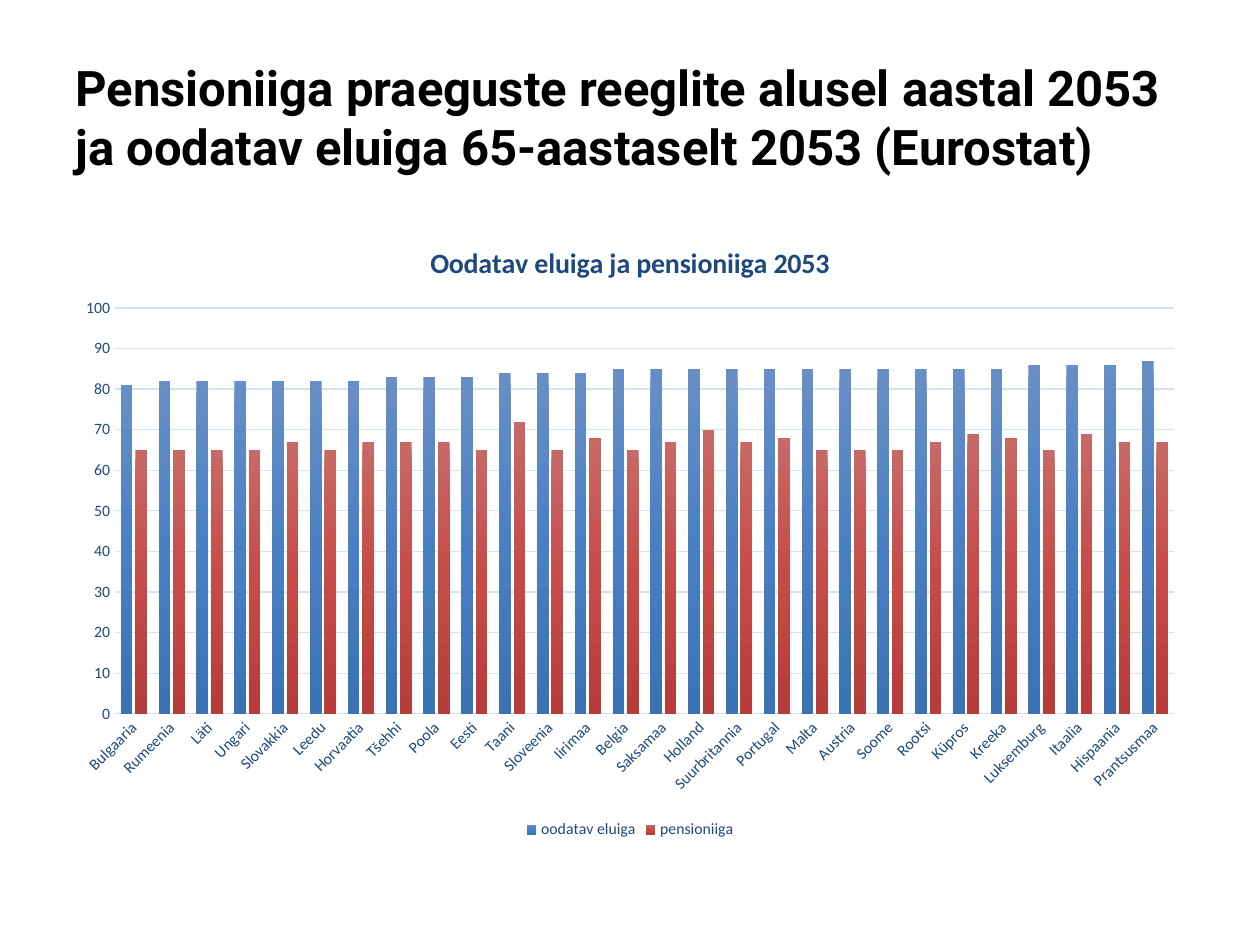
from dataclasses import dataclass

import pptx
import pptx.chart.data
import pptx.dml.color
import pptx.enum.chart
import pptx.enum.text
import pptx.oxml
import pptx.oxml.ns
import pptx.util

EMU_PER_PX = 914400 / 126
COLORS = {"heading": "000000", "label": "1F497D", "grid": "D4E3F4"}


@dataclass(frozen=True)
class Box:
    left: int
    top: int
    width: int
    height: int

    def emu(self) -> list[pptx.util.Emu]:
        return [px(n) for n in (self.left, self.top, self.width, self.height)]


@dataclass(frozen=True)
class Measure:
    name: str
    ages: tuple[int, ...]
    gradient: tuple[str, str, str]


SLIDE = Box(0, 0, 1260, 945)
HEADING = Box(63, 38, 1134, 157)
CHART = Box(63, 220, 1134, 624)
PLOT = Box(115, 308, 1059, 406)

COUNTRIES = (
    "Bulgaaria", "Rumeenia", "Läti", "Ungari", "Slovakkia", "Leedu", "Horvaatia",
    "Tšehhi", "Poola", "Eesti", "Taani", "Sloveenia", "Iirimaa", "Belgia",
    "Saksamaa", "Holland", "Suurbritannia", "Portugal", "Malta", "Austria", "Soome",
    "Rootsi", "Küpros", "Kreeka", "Luksemburg", "Itaalia", "Hispaania", "Prantsusmaa",
)
MEASURES = (
    Measure(
        "oodatav eluiga",
        (81, 82, 82, 82, 82, 82, 82, 83, 83, 83, 84, 84, 84, 85,
         85, 85, 85, 85, 85, 85, 85, 85, 85, 85, 86, 86, 86, 87),
        ("688FC5", "4A80C3", "3B72B3"),
    ),
    Measure(
        "pensioniiga",
        (65, 65, 65, 65, 67, 65, 67, 67, 67, 65, 72, 65, 68, 65,
         67, 70, 67, 68, 65, 65, 65, 67, 69, 68, 65, 69, 67, 67),
        ("C76967", "C64B47", "B63C39"),
    ),
)


def px(length: int) -> pptx.util.Emu:
    return pptx.util.Emu(round(length * EMU_PER_PX))


def rgb(name: str) -> pptx.dml.color.RGBColor:
    return pptx.dml.color.RGBColor.from_string(COLORS[name])


def style_font(font, face: str, size: int, color: str, bold: bool = False) -> None:
    font.name = face
    font.size = pptx.util.Pt(size)
    font.bold = bold
    font.color.rgb = rgb(color)


def style_line(line) -> None:
    line.color.rgb = rgb("grid")
    line.width = pptx.util.Pt(0.75)


def add_heading(slide, text: str) -> None:
    frame = slide.shapes.add_textbox(*HEADING.emu()).text_frame
    frame.word_wrap = True
    frame.vertical_anchor = pptx.enum.text.MSO_ANCHOR.MIDDLE
    run = frame.paragraphs[0].add_run()
    run.text = text
    style_font(run.font, "Roboto", 28, "heading", True)


def fill_gradient(series, colors: tuple[str, ...]) -> None:
    stops = "".join(
        f'<a:gs pos="{i * 50000}"><a:srgbClr val="{color}"/></a:gs>'
        for i, color in enumerate(colors)
    )
    gradient = pptx.oxml.parse_xml(
        f'<a:gradFill {pptx.oxml.ns.nsdecls("a")} rotWithShape="1">'
        f'<a:gsLst>{stops}</a:gsLst><a:lin ang="5400000" scaled="0"/></a:gradFill>'
    )
    series._element.get_or_add_spPr().insert(0, gradient)


def place_plot(chart) -> None:
    shares = {
        "x": (PLOT.left - CHART.left) / CHART.width,
        "y": (PLOT.top - CHART.top) / CHART.height,
        "w": PLOT.width / CHART.width,
        "h": PLOT.height / CHART.height,
    }
    modes = "".join(f'<c:{edge}Mode val="edge"/>' for edge in "xy")
    extents = "".join(f'<c:{k} val="{v:.4f}"/>' for k, v in shares.items())
    layout = pptx.oxml.parse_xml(
        f'<c:layout {pptx.oxml.ns.nsdecls("c")}><c:manualLayout>'
        f'<c:layoutTarget val="inner"/>{modes}{extents}</c:manualLayout></c:layout>'
    )
    plot_area = chart._chartSpace.chart.plotArea
    for automatic in plot_area.findall(pptx.oxml.ns.qn("c:layout")):
        plot_area.remove(automatic)
    plot_area.insert(0, layout)


def style_axes(chart) -> None:
    countries, ages = chart.category_axis, chart.value_axis
    for axis in (countries, ages):
        axis.major_tick_mark = pptx.enum.chart.XL_TICK_MARK.NONE
        axis.minor_tick_mark = pptx.enum.chart.XL_TICK_MARK.NONE
        style_font(axis.tick_labels.font, "Calibri", 9, "label")
    style_line(countries.format.line)
    countries._element.txPr.bodyPr.set("rot", "-2700000")
    ages.minimum_scale, ages.maximum_scale, ages.major_unit = 0, 100, 10
    ages.has_major_gridlines = True
    style_line(ages.major_gridlines.format.line)
    ages.format.line.fill.background()


def add_age_chart(slide, title: str, measures: tuple[Measure, ...]) -> None:
    data = pptx.chart.data.CategoryChartData(number_format="0")
    data.categories = COUNTRIES
    for measure in measures:
        data.add_series(measure.name, measure.ages)
    chart = slide.shapes.add_chart(
        pptx.enum.chart.XL_CHART_TYPE.COLUMN_CLUSTERED, *CHART.emu(), data
    ).chart
    style_font(chart.font, "Calibri", 10, "heading")
    chart.has_title = True
    chart.chart_title.include_in_layout = False
    run = chart.chart_title.text_frame.paragraphs[0].add_run()
    run.text = title
    style_font(run.font, "Calibri", 16, "label", True)

    columns = chart.plots[0]
    columns.gap_width, columns.overlap = 100, -24
    columns.vary_by_categories = False
    for series, measure in zip(columns.series, measures):
        fill_gradient(series, measure.gradient)
    style_axes(chart)
    place_plot(chart)

    chart.has_legend = True
    chart.legend.position = pptx.enum.chart.XL_LEGEND_POSITION.BOTTOM
    chart.legend.include_in_layout = False
    style_font(chart.legend.font, "Calibri", 9, "label")


def main() -> None:
    deck = pptx.Presentation()
    deck.slide_width, deck.slide_height = px(SLIDE.width), px(SLIDE.height)
    slide = deck.slides.add_slide(deck.slide_layouts[6])
    add_heading(
        slide,
        "Pensioniiga praeguste reeglite alusel aastal 2053 "
        "ja oodatav eluiga 65-aastaselt 2053 (Eurostat)",
    )
    add_age_chart(slide, "Oodatav eluiga ja pensioniiga 2053", MEASURES)
    deck.save("out.pptx")


if __name__ == "__main__":
    main()
